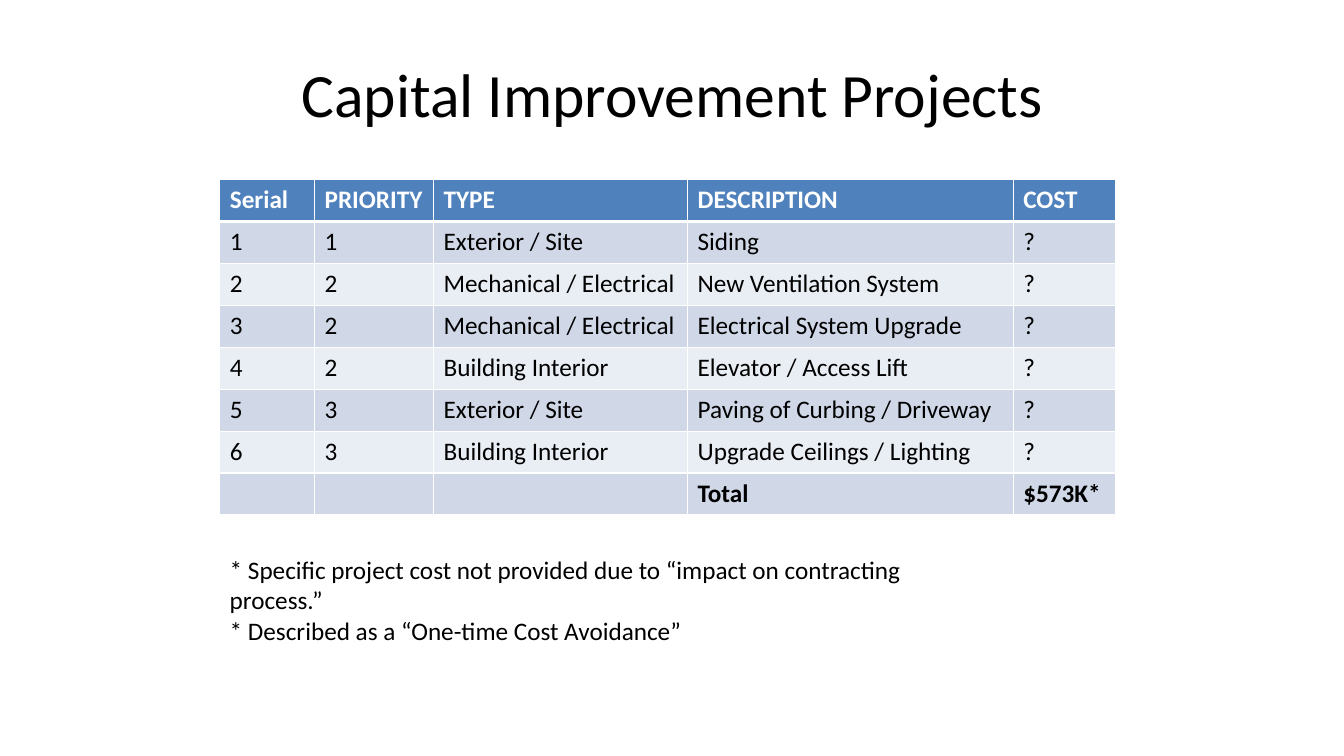
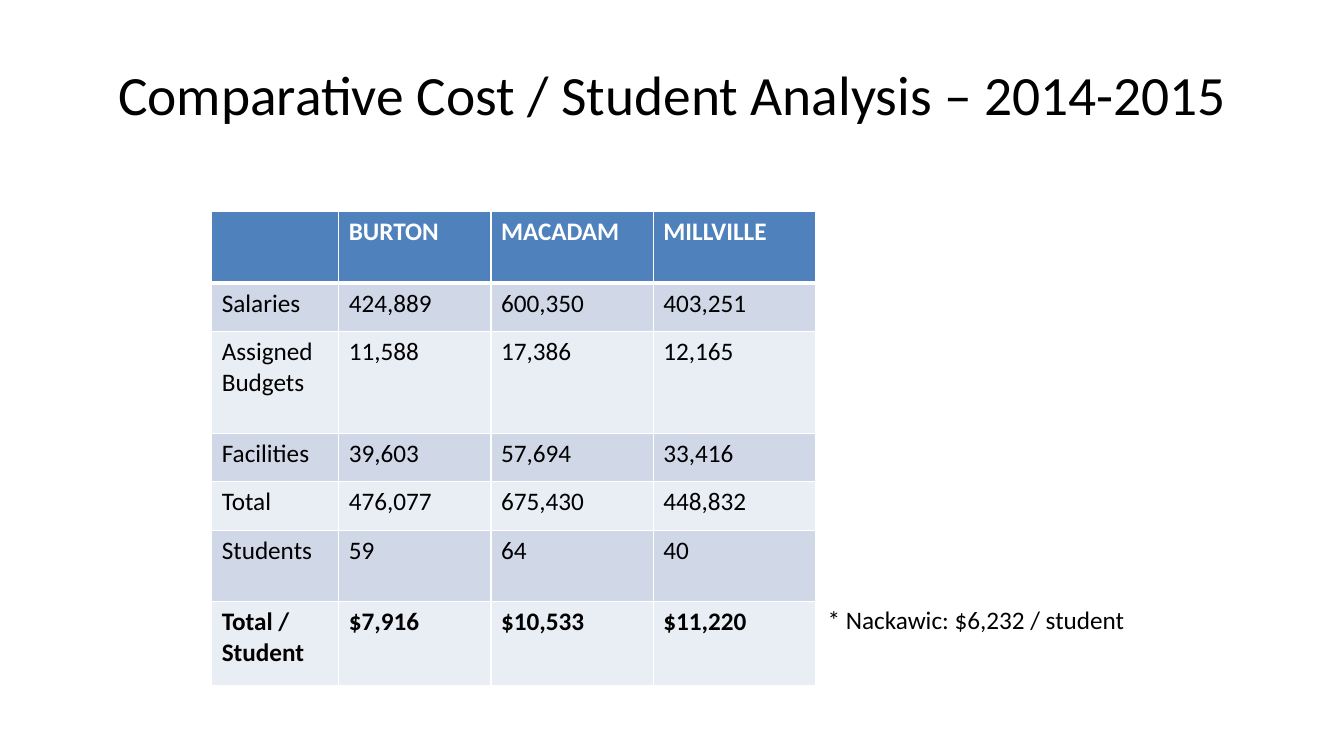
import dataclasses
import lxml.etree
import pptx
import pptx.dml.color
import pptx.enum.text
import pptx.oxml.ns
import pptx.util

Inches = pptx.util.Inches
Align = pptx.enum.text.PP_ALIGN
Anchor = pptx.enum.text.MSO_ANCHOR


@dataclasses.dataclass(frozen=True)
class Theme:
    font: str = "Calibri"
    ink: str = "000000"
    white: str = "FFFFFF"
    head: str = "4F81BD"
    bands: tuple = ("D0D8E8", "E9EDF4")
    title: float = 44
    body: float = 18
    thin: float = 1
    thick: float = 3


THEME = Theme()


def color(code):
    return pptx.dml.color.RGBColor.from_string(code)


def write(frame, text, size=THEME.body, ink=THEME.ink, bold=False,
          align=Align.LEFT, anchor=Anchor.TOP):
    frame.word_wrap = True
    frame.vertical_anchor = anchor
    for i, line in enumerate(text.split("\n")):
        para = frame.add_paragraph() if i else frame.paragraphs[0]
        para.alignment = align
        run = para.add_run()
        run.text = line
        run.font.name = THEME.font
        run.font.size = pptx.util.Pt(size)
        run.font.bold = bold
        run.font.color.rgb = color(ink)


def border(cell, base):
    props = cell._tc.get_or_add_tcPr()
    name = pptx.oxml.ns.qn
    widths = {"L": THEME.thin, "R": THEME.thin, "T": THEME.thin, "B": base}
    for side, width in widths.items():
        line = lxml.etree.SubElement(props, name("a:ln" + side), w=str(pptx.util.Pt(width)))
        fill = lxml.etree.SubElement(line, name("a:solidFill"))
        lxml.etree.SubElement(fill, name("a:srgbClr"), val=THEME.white)


def add_page(deck, title, size=THEME.title):
    page = deck.slides.add_slide(deck.slide_layouts[5])
    shape = page.shapes.title
    shape.left, shape.top = Inches(0.67), Inches(0.3)
    shape.width, shape.height = Inches(12), Inches(1.25)
    shape.text_frame.auto_size = pptx.enum.text.MSO_AUTO_SIZE.NONE
    write(shape.text_frame, title, size=size, align=Align.CENTER, anchor=Anchor.MIDDLE)
    return page


def add_grid(page, left, top, cols, rows, data):
    grid = page.shapes.add_table(
        len(rows), len(cols), Inches(left), Inches(top),
        Inches(sum(cols)), Inches(sum(rows))).table
    for col, width in zip(grid.columns, cols):
        col.width = Inches(width)
    for r, (height, texts) in enumerate(zip(rows, data)):
        grid.rows[r].height = Inches(height)
        head = r == 0
        bold = head or r == len(rows) - 1
        for c, text in enumerate(texts):
            cell = grid.cell(r, c)
            border(cell, THEME.thick if r == 0 else THEME.thin)
            cell.fill.solid()
            cell.fill.fore_color.rgb = color(THEME.head if head else THEME.bands[(r - 1) % 2])
            if text:
                write(cell.text_frame, text, bold=bold,
                      ink=THEME.white if head else THEME.ink)


def add_note(page, left, top, width, height, text):
    box = page.shapes.add_textbox(Inches(left), Inches(top), Inches(width), Inches(height))
    write(box.text_frame, text)


def add_projects(deck):
    page = add_page(deck, "Capital Improvement Projects")
    data = [
        ("Serial", "PRIORITY", "TYPE", "DESCRIPTION", "COST"),
        ("1", "1", "Exterior / Site", "Siding", "?"),
        ("2", "2", "Mechanical / Electrical", "New Ventilation System", "?"),
        ("3", "2", "Mechanical / Electrical", "Electrical System Upgrade", "?"),
        ("4", "2", "Building Interior", "Elevator / Access Lift", "?"),
        ("5", "3", "Exterior / Site", "Paving of Curbing / Driveway", "?"),
        ("6", "3", "Building Interior", "Upgrade Ceilings / Lighting", "?"),
        ("", "", "", "Total", "$573K*"),
    ]
    left = 2.18
    add_grid(page, left, 1.78, [0.94, 1.18, 2.52, 3.23, 1.02], [3.33 / len(data)] * len(data), data)
    add_note(page, left, 5.45, 7.48, 1.01,
             "* Specific project cost not provided due to “impact on contracting process.”\n"
             "* Described as a “One-time Cost Avoidance”")


def add_costs(deck):
    page = add_page(deck, "Comparative Cost / Student Analysis – 2014-2015", size=39.6)
    data = [
        ("", "BURTON", "MACADAM", "MILLVILLE"),
        ("Salaries", "424,889", "600,350", "403,251"),
        ("Assigned Budgets", "11,588", "17,386", "12,165"),
        ("Facilities", "39,603", "57,694", "33,416"),
        ("Total", "476,077", "675,430", "448,832"),
        ("Students", "59", "64", "40"),
        ("Total / Student", "$7,916", "$10,533", "$11,220"),
    ]
    add_grid(page, 2.1, 2.1, [1.26, 1.51, 1.61, 1.61],
             [0.71, 0.48, 1.01, 0.48, 0.48, 0.71, 0.83], data)
    add_note(page, 8.11, 5.95, 3.58, 0.4, "* Nackawic: $6,232 / student")


def main():
    deck = pptx.Presentation()
    deck.slide_width, deck.slide_height = Inches(13.33), Inches(7.5)
    add_projects(deck)
    add_costs(deck)
    deck.save("out.pptx")


if __name__ == "__main__":
    main()
